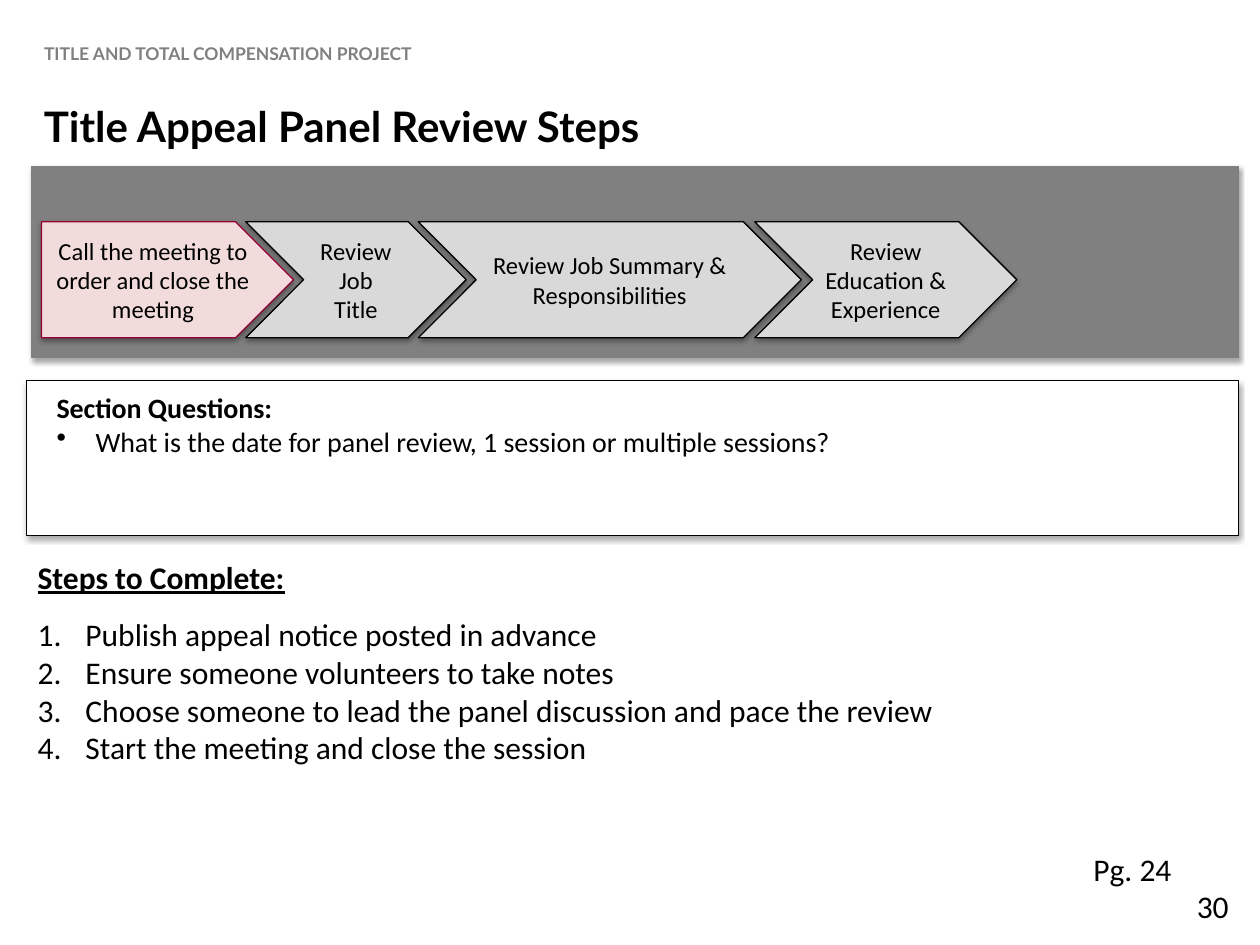
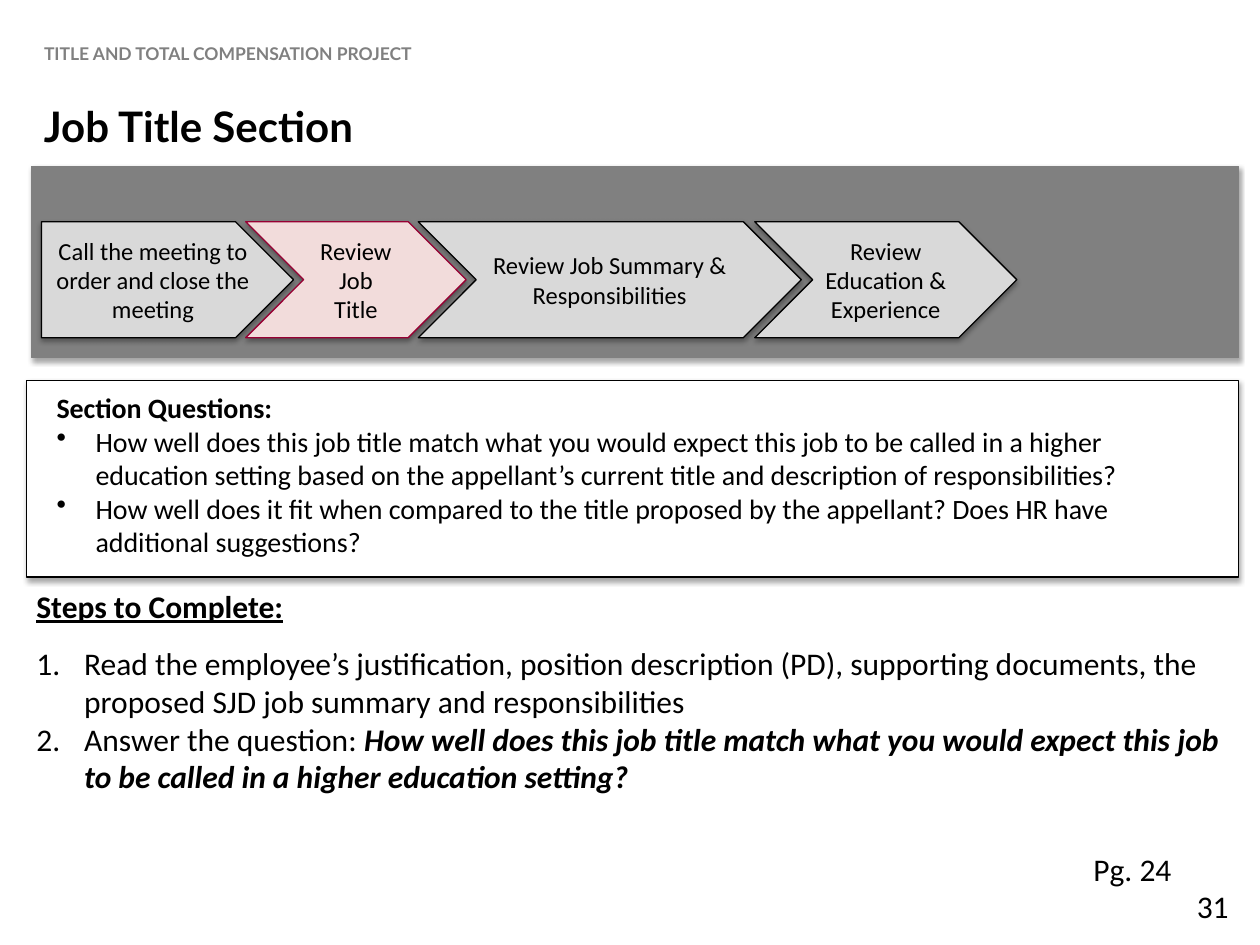
from dataclasses import dataclass

from lxml import etree
from pptx import Presentation
from pptx.dml.color import RGBColor
from pptx.enum.shapes import MSO_SHAPE
from pptx.enum.text import MSO_ANCHOR, PP_ALIGN
from pptx.oxml.ns import qn
from pptx.util import Inches, Pt

BLACK = RGBColor(0x00, 0x00, 0x00)
WHITE = RGBColor(0xFF, 0xFF, 0xFF)
GRAY = RGBColor(0x80, 0x80, 0x80)
SILVER = RGBColor(0xD9, 0xD9, 0xD9)
PINK = RGBColor(0xF2, 0xDC, 0xDB)
WINE = RGBColor(0x97, 0x00, 0x33)

RECT, PLATE, ARROW = MSO_SHAPE.RECTANGLE, MSO_SHAPE.PENTAGON, MSO_SHAPE.CHEVRON
LEFT, CENTER, RIGHT = PP_ALIGN.LEFT, PP_ALIGN.CENTER, PP_ALIGN.RIGHT
MIDDLE = MSO_ANCHOR.MIDDLE

# Text formats
BRAND = {"name": "Lato", "size": Pt(10), "bold": True}
TITLE = {"name": "Lato", "size": Pt(24), "bold": True}
LABEL = {"name": "Calibri", "size": Pt(14)}
ASK = {"name": "Calibri", "size": Pt(16)}
BODY = {"name": "Calibri", "size": Pt(18)}
HEAD = {"bold": True, "underline": True}
STRONG = {"bold": True, "italic": True}

DOT = ("buChar", {"char": "•"}, 0.31)
NUMBER = ("buAutoNum", {"type": "arabicPeriod"}, 0.38)


@dataclass(frozen=True)
class Box:
    left: float
    top: float
    width: float
    height: float

    def sizes(self) -> tuple:
        return tuple(Inches(v) for v in (self.left, self.top, self.width, self.height))


@dataclass(frozen=True)
class Step:
    left: float
    width: float
    kind: int
    lines: tuple


@dataclass(frozen=True)
class Page:
    number: int
    title: str
    stage: int
    frame: Box
    asks: tuple
    work: Box
    tasks: tuple  # each task is a plain part and a strong part


STEPS = (
    Step(0.33, 2.0, PLATE, ("Call the meeting to order and close the meeting",)),
    Step(1.95, 1.75, ARROW, ("Review", "Job Title")),
    Step(3.32, 3.04, ARROW, ("Review Job Summary & Responsibilities",)),
    Step(5.99, 2.08, ARROW, ("Review Education & Experience",)),
)

PAGES = (
    Page(
        30, "Title Appeal Panel Review Steps", 0, Box(0.21, 3.02, 9.62, 1.23),
        ("What is the date for panel review, 1 session or multiple sessions?",),
        Box(0.2, 4.38, 7.88, 2.07),
        (
            ("Publish appeal notice posted in advance", ""),
            ("Ensure someone volunteers to take notes", ""),
            ("Choose someone to lead the panel discussion and pace the review", ""),
            ("Start the meeting and close the session", ""),
        ),
    ),
    Page(
        31, "Job Title Section", 1, Box(0.21, 3.02, 9.62, 1.56),
        (
            "How well does this job title match what you would expect this job to be "
            "called in a higher education setting based on the appellant’s current "
            "title and description of responsibilities?",
            "How well does it fit when compared to the title proposed by the "
            "appellant? Does HR have additional suggestions?",
        ),
        Box(0.19, 4.61, 9.62, 2.07),
        (
            ("Read the employee’s justification, position description (PD), supporting "
             "documents, the proposed SJD job summary and responsibilities", ""),
            ("Answer the question: ",
             "How well does this job title match what you would expect this job "
             "to be called in a higher education setting?"),
        ),
    ),
)


def add_run(para, text: str, style: dict, color: RGBColor = BLACK) -> None:
    run = para.add_run()
    run.text = text
    for key, value in style.items():
        setattr(run.font, key, value)
    run.font.color.rgb = color


def add_para(frame, text: str, style: dict, align=LEFT, color: RGBColor = BLACK):
    """Fill the first paragraph while it is blank, else append one."""
    para = frame.paragraphs[0]
    if para.runs:
        para = frame.add_paragraph()
    para.alignment = align
    add_run(para, text, style, color)
    return para


def add_mark(para, mark: tuple) -> None:
    tag, attrs, indent = mark
    props = para._p.get_or_add_pPr()
    props.set("marL", str(Inches(indent)))
    props.set("indent", str(-Inches(indent)))
    etree.SubElement(props, qn("a:" + tag), attrs)


def add_text(shapes, box: Box):
    frame = shapes.add_textbox(*box.sizes()).text_frame
    frame.word_wrap = True
    return frame


def add_shade(shape) -> None:
    shape.shadow.inherit = False
    effects = shape._element.spPr.find(qn("a:effectLst"))
    shade = etree.SubElement(effects, qn("a:outerShdw"), {
        "blurRad": str(Pt(3.1)), "dist": str(Pt(1.8)),
        "dir": "5400000", "rotWithShape": "0"})
    tint = etree.SubElement(shade, qn("a:srgbClr"), val=str(BLACK))
    etree.SubElement(tint, qn("a:alpha"), val="35000")


def add_block(shapes, kind: int, box: Box, fill: RGBColor, line: RGBColor):
    shape = shapes.add_shape(kind, *box.sizes())
    shape.fill.solid()
    shape.fill.fore_color.rgb = fill
    shape.line.color.rgb = line
    shape.line.width = Pt(0.75)
    add_shade(shape)
    return shape


def draw_base(shapes, page: Page) -> None:
    # Project name, slide number, title and page reference
    brand = add_text(shapes, Box(0, 0.24, 10, 0.37))
    brand.vertical_anchor = MIDDLE
    brand.margin_left = Inches(0.35)
    add_para(brand, "TITLE AND TOTAL COMPENSATION PROJECT", BRAND, color=GRAY)
    for box, text, style, align in (
        (Box(8.25, 6.99, 1.6, 0.4), str(page.number), BODY, RIGHT),
        (Box(0.25, 0.75, 9.42, 0.5), page.title, TITLE, LEFT),
        (Box(8.58, 6.7, 0.92, 0.4), "Pg. 24", BODY, LEFT),
    ):
        add_para(add_text(shapes, box), text, style, align)


def draw_steps(shapes, stage: int) -> None:
    # Band with the current stage tinted
    add_block(shapes, RECT, Box(0.25, 1.32, 9.58, 1.52), GRAY, GRAY)
    group = shapes.add_group_shape().shapes
    for index, step in enumerate(STEPS):
        fill, line = (PINK, WINE) if index == stage else (SILVER, BLACK)
        box = Box(step.left, 1.76, step.width, 0.92)
        frame = add_block(group, step.kind, box, fill, line).text_frame
        frame.word_wrap = True
        frame.vertical_anchor = MIDDLE
        for text in step.lines:
            add_para(frame, text, LABEL, CENTER)


def draw_asks(shapes, page: Page) -> None:
    # Framed section questions
    group = shapes.add_group_shape().shapes
    add_block(group, RECT, page.frame, WHITE, BLACK)
    frame = add_text(group, Box(0.35, 3.05, 9.31, page.frame.height - 0.1))
    add_para(frame, "Section Questions:", ASK | {"bold": True})
    for ask in page.asks:
        add_mark(add_para(frame, ask, ASK), DOT)


def draw_tasks(shapes, page: Page) -> None:
    # Numbered steps to complete
    frame = add_text(shapes, page.work)
    add_para(frame, "Steps to Complete:", BODY | HEAD).space_after = Pt(11)
    for plain, strong in page.tasks:
        para = add_para(frame, plain, BODY)
        add_mark(para, NUMBER)
        if strong:
            add_run(para, strong, BODY | STRONG)


def main() -> None:
    deck = Presentation()
    deck.slide_width, deck.slide_height = Inches(10), Inches(7.5)
    for page in PAGES:
        shapes = deck.slides.add_slide(deck.slide_layouts[6]).shapes
        draw_base(shapes, page)
        draw_steps(shapes, page.stage)
        draw_asks(shapes, page)
        draw_tasks(shapes, page)
    deck.save("out.pptx")


if __name__ == "__main__":
    main()
